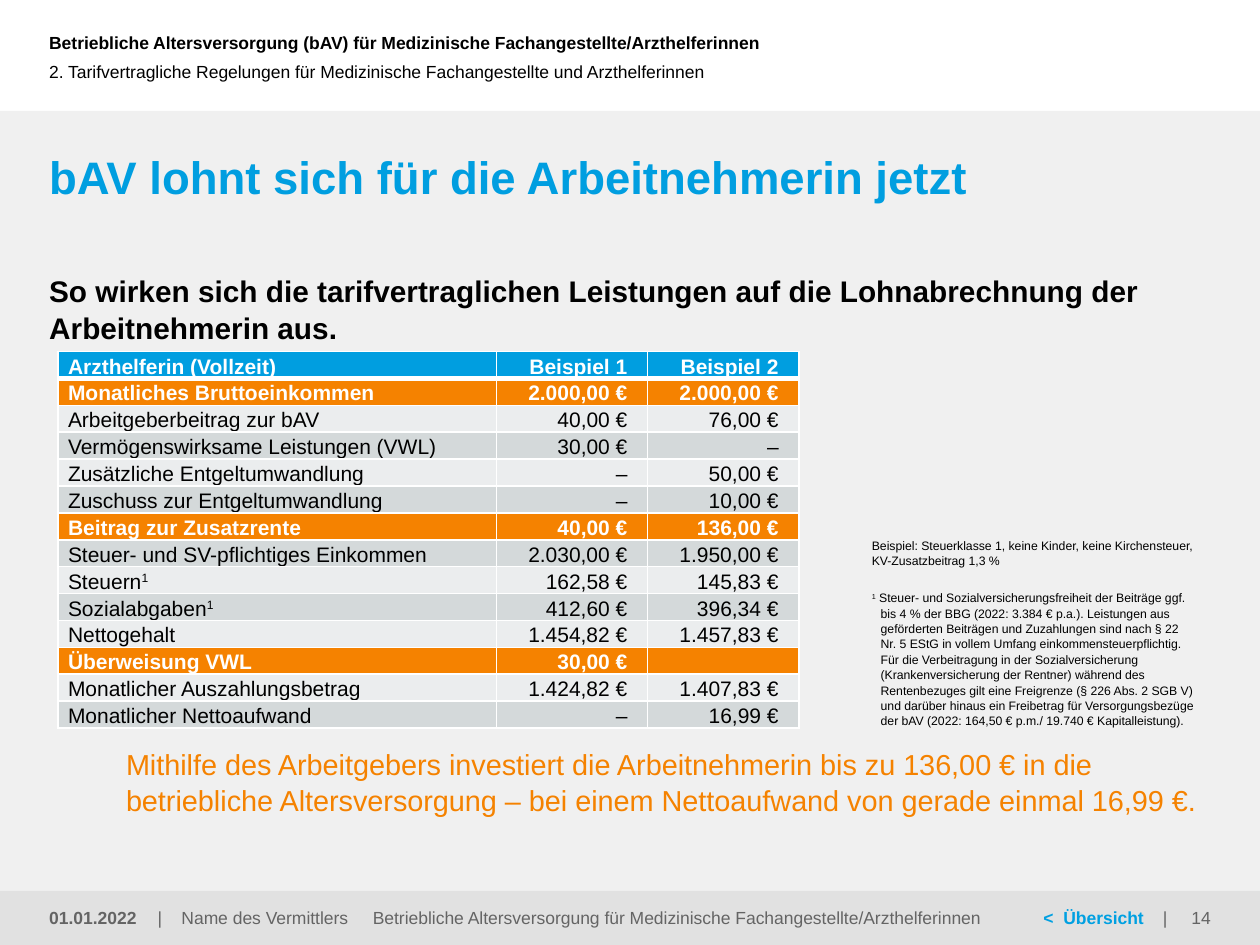
import pptx
import pptx.dml.color
import pptx.enum.shapes
import pptx.enum.text
import pptx.oxml.ns
import pptx.util
from lxml import etree

COLORS = {
    "black": "000000", "white": "FFFFFF", "gray": "646464",
    "body": "F0F0F0", "footer": "E1E1E1", "blue": "009EE0", "link": "00A0E1",
    "orange": "F58200", "light": "EBEDEE", "dark": "D4D9DA",
}
FONT = "Arial"
ALIGN = pptx.enum.text.PP_ALIGN
ANCHOR = pptx.enum.text.MSO_ANCHOR

# Grid of 100 columns by 75 rows; boxes are (left, top, width, height)
UNIT = pptx.util.Inches(10) // 100
PAGE = (0, 0, 100, 75)

ROWS = [
    ("Arzthelferin (Vollzeit)", "Beispiel 1", "Beispiel 2"),
    ("Monatliches Bruttoeinkommen", "2.000,00 €", "2.000,00 €"),
    ("Arbeitgeberbeitrag zur bAV", "40,00 €", "76,00 €"),
    ("Vermögenswirksame Leistungen (VWL)", "30,00 €", "–"),
    ("Zusätzliche Entgeltumwandlung", "–", "50,00 €"),
    ("Zuschuss zur Entgeltumwandlung", "–", "10,00 €"),
    ("Beitrag zur Zusatzrente", "40,00 €", "136,00 €"),
    ("Steuer- und SV-pflichtiges Einkommen", "2.030,00 €", "1.950,00 €"),
    ("Steuern^1", "162,58 €", "145,83 €"),
    ("Sozialabgaben^1", "412,60 €", "396,34 €"),
    ("Nettogehalt", "1.454,82 €", "1.457,83 €"),
    ("Überweisung VWL", "30,00 €", ""),
    ("Monatlicher Auszahlungsbetrag", "1.424,82 €", "1.407,83 €"),
    ("Monatlicher Nettoaufwand", "–", "16,99 €"),
]
SUBTOTALS = (1, 6, 11)


def grid(count):
    return int(count * UNIT)


def rgb(name):
    return pptx.dml.color.RGBColor.from_string(COLORS[name])


def inside(box, left, top, width, height):
    return box[0] + left, box[1] + top, width, height


def add_run(para, text, size, color="black", bold=False, raised=False):
    span = para.add_run()
    span.text = text
    span.font.name = FONT
    span.font.size = pptx.util.Pt(size)
    span.font.bold = bold
    span.font.color.rgb = rgb(color)
    if raised:
        span.font._element.set("baseline", "30000")


def add_tabs(para, stops):
    tabs = etree.SubElement(para._p.get_or_add_pPr(), pptx.oxml.ns.qn("a:tabLst"))
    for stop in stops:
        etree.SubElement(tabs, pptx.oxml.ns.qn("a:tab"), pos=str(grid(stop)), algn="l")


def add_text(page, box, *spans, anchor=ANCHOR.MIDDLE, align=ALIGN.LEFT,
             insets=(0, 0, 0, 0), spacing=None, tabs=()):
    frame = page.shapes.add_textbox(*map(grid, box)).text_frame
    frame.word_wrap = True
    frame.vertical_anchor = anchor
    (frame.margin_left, frame.margin_top,
     frame.margin_right, frame.margin_bottom) = map(grid, insets)
    para = frame.paragraphs[0]
    para.alignment = align
    if spacing:
        para.line_spacing = spacing
    if tabs:
        add_tabs(para, tabs)
    for span in spans:
        add_run(para, *span)
    return para


def add_band(page, box, color):
    band = page.shapes.add_shape(
        pptx.enum.shapes.MSO_SHAPE.RECTANGLE, *map(grid, box))
    band.shadow.inherit = False
    band.fill.solid()
    band.fill.fore_color.rgb = rgb(color)
    band.line.fill.background()


def add_header(page, box):
    add_text(page, inside(box, 0, 0, 69.8, 6.7),
             ("Betriebliche Altersversorgung (bAV) für Medizinische "
              "Fachangestellte/Arzthelferinnen", 10, "black", True),
             insets=(3.9, 0.5, 1, 0.5))
    add_text(page, inside(box, 0, 2.5, 71.5, 6.3),
             ("2. Tarifvertragliche Regelungen für Medizinische "
              "Fachangestellte und Arzthelferinnen", 10), insets=(3.9, 0, 0, 0))


def add_messages(page, box):
    add_text(page, inside(box, 0, 2.6, 92.2, 5.5),
             ("bAV lohnt sich für die Arbeitnehmerin jetzt", 26, "blue", True),
             anchor=ANCHOR.TOP, spacing=1.1)
    add_text(page, inside(box, 0, 12.7, 92.2, 5.7),
             ("So wirken sich die tarifvertraglichen Leistungen auf die "
              "Lohnabrechnung der Arbeitnehmerin aus.", 17, "black", True),
             anchor=ANCHOR.TOP, spacing=1.05)
    add_text(page, inside(box, 6.1, 50.2, 86.1, 6.8),
             ("Mithilfe des Arbeitgebers investiert die Arbeitnehmerin bis zu "
              "136,00 € in die betriebliche Altersversorgung – bei einem "
              "Nettoaufwand von gerade einmal 16,99 €.", 16.5, "orange"),
             insets=(0, 0, 0, 0.8), spacing=1.05)


def style_cell(cell, fill, borders):
    for side, width in borders.items():
        line = etree.SubElement(cell._tc.get_or_add_tcPr(),
                                pptx.oxml.ns.qn("a:ln" + side),
                                w=str(pptx.util.Pt(width)))
        solid = etree.SubElement(line, pptx.oxml.ns.qn("a:solidFill"))
        etree.SubElement(solid, pptx.oxml.ns.qn("a:srgbClr"), val=COLORS["white"])
    cell.fill.solid()
    cell.fill.fore_color.rgb = rgb(fill)
    cell.vertical_anchor = ANCHOR.BOTTOM
    cell.margin_top = cell.margin_bottom = 0
    cell.margin_left = grid(0.8)


def add_payroll(page, box):
    table = page.shapes.add_table(len(ROWS), 3, *map(grid, box)).table
    table.first_row = table.horz_banding = False
    for column, width in zip(table.columns, (34.8, 12, 12)):
        column.width = grid(width)
    for index, values in enumerate(ROWS):
        table.rows[index].height = grid(box[3] / len(ROWS))
        strong = index == 0 or index in SUBTOTALS
        if index == 0:
            fill = "blue"
        elif strong:
            fill = "orange"
        else:
            fill = "dark" if index % 2 else "light"
        borders = {"L": 1, "R": 1, "T": 3 if index == 1 else 1,
                   "B": 3 if index == 0 else 1}
        for number, value in enumerate(values):
            cell = table.cell(index, number)
            style_cell(cell, fill, borders)
            cell.margin_right = grid(1.6 if number else 0.8)
            para = cell.text_frame.paragraphs[0]
            para.alignment = ALIGN.RIGHT if number else ALIGN.LEFT
            color = "white" if strong else "black"
            label, _, mark = value.partition("^")
            if label:
                add_run(para, label, 12, color, strong)
            else:
                # Keeps the empty cell as low as its row
                etree.SubElement(para._p, pptx.oxml.ns.qn("a:endParaRPr"), sz="1200")
            if mark:
                add_run(para, mark, 12, color, strong, True)


def add_notes(page, box):
    add_text(page, inside(box, 0, 0, 25.7, 4.1),
             ("Beispiel: Steuerklasse 1, keine Kinder, keine Kirchensteuer, "
              "KV-Zusatzbeitrag 1,3 %", 7),
             anchor=ANCHOR.BOTTOM, insets=(0, 0.5, 0, 1.2), spacing=1.05)
    para = add_text(
        page, inside(box, 0, 3.4, 25.7, 12.2), ("1", 7, "black", False, True),
        (" Steuer- und Sozialversicherungsfreiheit der Beiträge ggf. bis 4 % der "
         "BBG (2022: 3.384 € p.a.). Leistungen aus geförderten Beiträgen und "
         "Zuzahlungen sind nach § 22 Nr. 5 EStG in vollem Umfang "
         "einkommensteuerpflichtig. Für die Verbeitragung in der "
         "Sozialversicherung (Krankenversicherung der Rentner) während des "
         "Rentenbezuges gilt eine Freigrenze (§ 226 Abs. 2 SGB V) und darüber "
         "hinaus ein Freibetrag für Versorgungsbezüge der bAV (2022: 164,50 € "
         "p.m./ 19.740 € Kapitalleistung).", 7),
        anchor=ANCHOR.BOTTOM, insets=(0, 0.4, 0, 0), spacing=1.05)
    para._p.pPr.set("marL", str(grid(0.7)))
    para._p.pPr.set("indent", str(grid(-0.7)))


def add_footer(page, box):
    add_band(page, box, "footer")
    height = box[3]
    add_text(page, inside(box, 12.5, 0, 24.2, height),
             ("|\tName des Vermittlers", 10, "gray"), tabs=(1.9,))
    add_text(page, inside(box, 68.8, 0, 24.2, height),
             ("<\tÜbersicht", 10, "link", True), ("\t|", 10, "gray"),
             insets=(14, 0, 0, 0), tabs=(1.6, 9.5))
    add_text(page, inside(box, 0, 0, 12.2, height),
             ("01.01.2022", 10, "gray", True), insets=(3.9, 0.5, 1, 0.5))
    add_text(page, inside(box, 27.7, 0, 52, height),
             ("Betriebliche Altersversorgung für Medizinische "
              "Fachangestellte/Arzthelferinnen", 10, "gray"), align=ALIGN.CENTER)
    add_text(page, inside(box, 90.6, 0, 9.4, height), ("14", 10, "gray"),
             align=ALIGN.RIGHT, insets=(1, 0.5, 3.9, 0.5))


def main():
    deck = pptx.Presentation()
    deck.slide_width, deck.slide_height = grid(PAGE[2]), grid(PAGE[3])
    page = deck.slides.add_slide(deck.slide_layouts[6])
    add_band(page, inside(PAGE, 0, 8.8, 100, 66.2), "body")
    add_footer(page, inside(PAGE, 0, 70.7, 100, 4.3))
    add_header(page, inside(PAGE, 0, 0, 100, 8.8))
    add_messages(page, inside(PAGE, 3.9, 8.8, 92.2, 57))
    add_notes(page, inside(PAGE, 69.2, 42.2, 25.7, 15.6))
    add_payroll(page, inside(PAGE, 4.6, 27.9, 58.8, 29.9))
    deck.save("out.pptx")


if __name__ == "__main__":
    main()
